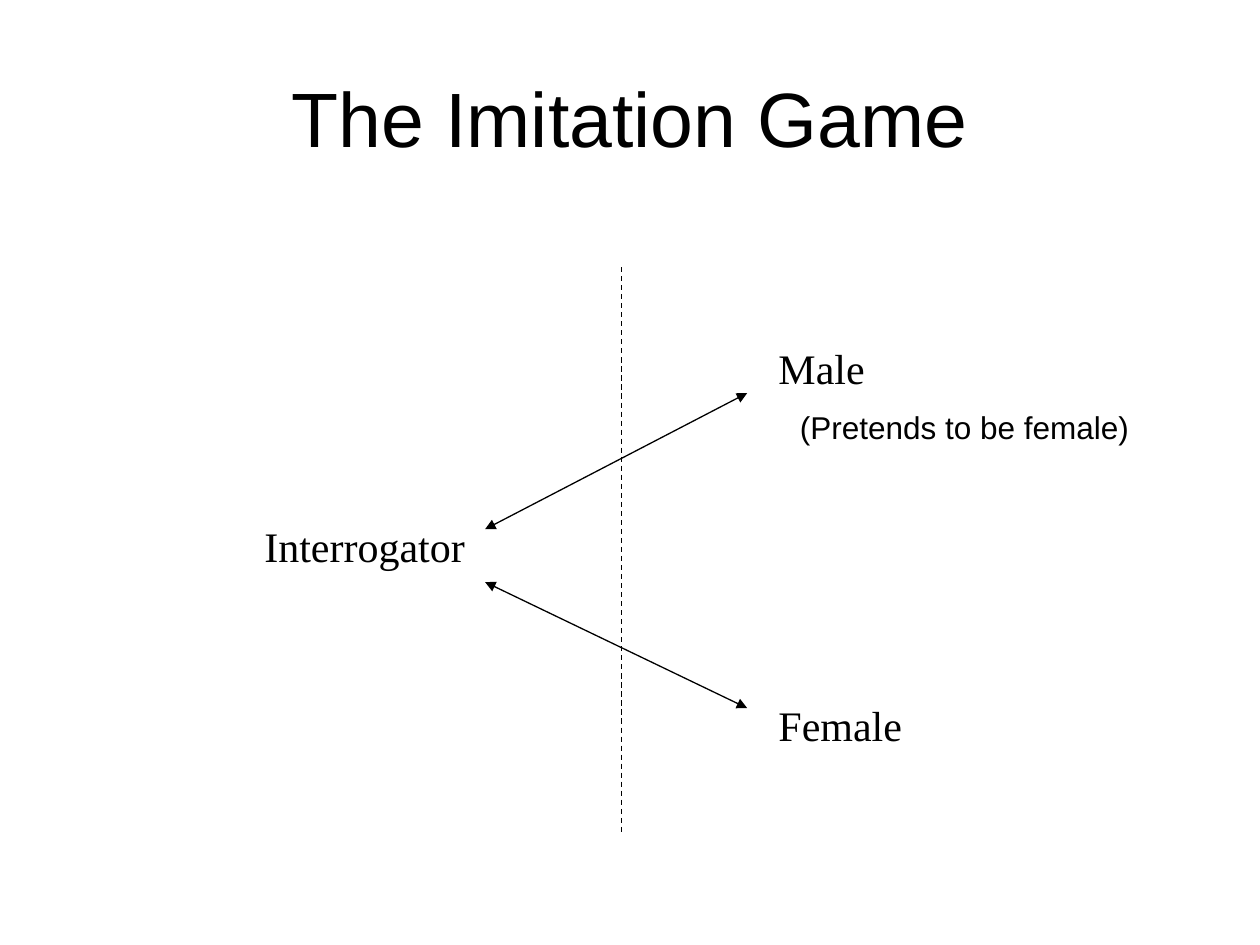
"""Build the Imitation Game slide: an interrogator facing two hidden players."""
from dataclasses import dataclass
from typing import Optional

from lxml import etree
from pptx import Presentation
from pptx.dml.color import RGBColor
from pptx.enum import dml, shapes, text
from pptx.oxml import ns
from pptx.util import Inches, Pt


@dataclass(frozen=True)
class Theme:
    ink: RGBColor = RGBColor(0, 0, 0)
    sans: str = "Arial"
    serif: str = "Times New Roman"
    title_size: int = 44
    player_size: int = 24
    remark_size: int = 18
    line_width: float = 0.75


THEME = Theme()


@dataclass(frozen=True)
class Label:
    wording: str
    left: float
    top: float
    width: float
    height: float = 0.5
    font: str = THEME.serif
    size: int = THEME.player_size
    align: text.PP_ALIGN = text.PP_ALIGN.LEFT
    anchor: text.MSO_ANCHOR = text.MSO_ANCHOR.TOP
    wrap: bool = False
    fit: text.MSO_AUTO_SIZE = text.MSO_AUTO_SIZE.SHAPE_TO_FIT_TEXT


@dataclass(frozen=True)
class Link:
    start: tuple[float, float]
    end: tuple[float, float]
    arrows: bool = True
    dash: Optional[dml.MSO_LINE] = None


ASKER_X, PLAYER_X, SCREEN_X = 3.85, 5.93, 4.93
PLAYER_LEFT = 6.08

LABELS = (
    Label("The Imitation Game", 0.5, 0.3, 9, 1.25, THEME.sans, THEME.title_size,
          text.PP_ALIGN.CENTER, text.MSO_ANCHOR.MIDDLE, True, text.MSO_AUTO_SIZE.NONE),
    Label("Interrogator", 2, 4.08, 1.79),
    Label("Male", PLAYER_LEFT, 2.67, 0.89),
    Label("Female", PLAYER_LEFT, 5.5, 1.19),
    Label("(Pretends to be female)", 6.25, 3.19, 2.84, 0.4, THEME.sans, THEME.remark_size),
)

LINKS = (
    Link((ASKER_X, 4.2), (PLAYER_X, 3.12)),
    Link((ASKER_X, 4.62), (PLAYER_X, 5.62)),
    Link((SCREEN_X, 2.12), (SCREEN_X, 6.62), False, dml.MSO_LINE.DASH),
)


def apply(target: object, values: dict[str, object]) -> None:
    """Set each named attribute on the target."""
    for name, value in values.items():
        setattr(target, name, value)


def draw_label(slide, label: Label) -> None:
    """Add one line of text in its own box."""
    box = slide.shapes.add_textbox(
        *map(Inches, (label.left, label.top, label.width, label.height)))
    frame = box.text_frame
    apply(frame, {"word_wrap": label.wrap, "auto_size": label.fit,
                  "vertical_anchor": label.anchor})
    line = frame.paragraphs[0]
    line.alignment = label.align
    wording = line.add_run()
    wording.text = label.wording
    apply(wording.font, {"name": label.font, "size": Pt(label.size)})
    wording.font.color.rgb = THEME.ink


def draw_link(slide, link: Link) -> None:
    """Add one straight line, with arrowheads at both ends if asked for."""
    connector = slide.shapes.add_connector(
        shapes.MSO_CONNECTOR.STRAIGHT, *map(Inches, link.start + link.end))
    stroke = connector.line
    stroke.color.rgb = THEME.ink
    apply(stroke, {"width": Pt(THEME.line_width), "dash_style": link.dash})
    properties = connector._element.spPr
    if link.arrows:
        outline = properties.find(ns.qn("a:ln"))
        for end in ("a:headEnd", "a:tailEnd"):
            etree.SubElement(outline, ns.qn(end), type="triangle")
    etree.SubElement(properties, ns.qn("a:effectLst"))


def main() -> None:
    """Draw every part and save the deck."""
    deck = Presentation()
    apply(deck, {"slide_width": Inches(10), "slide_height": Inches(7.5)})
    slide = deck.slides.add_slide(deck.slide_layouts[6])
    for link in LINKS:
        draw_link(slide, link)
    for label in LABELS:
        draw_label(slide, label)
    deck.save("out.pptx")


if __name__ == "__main__":
    main()
